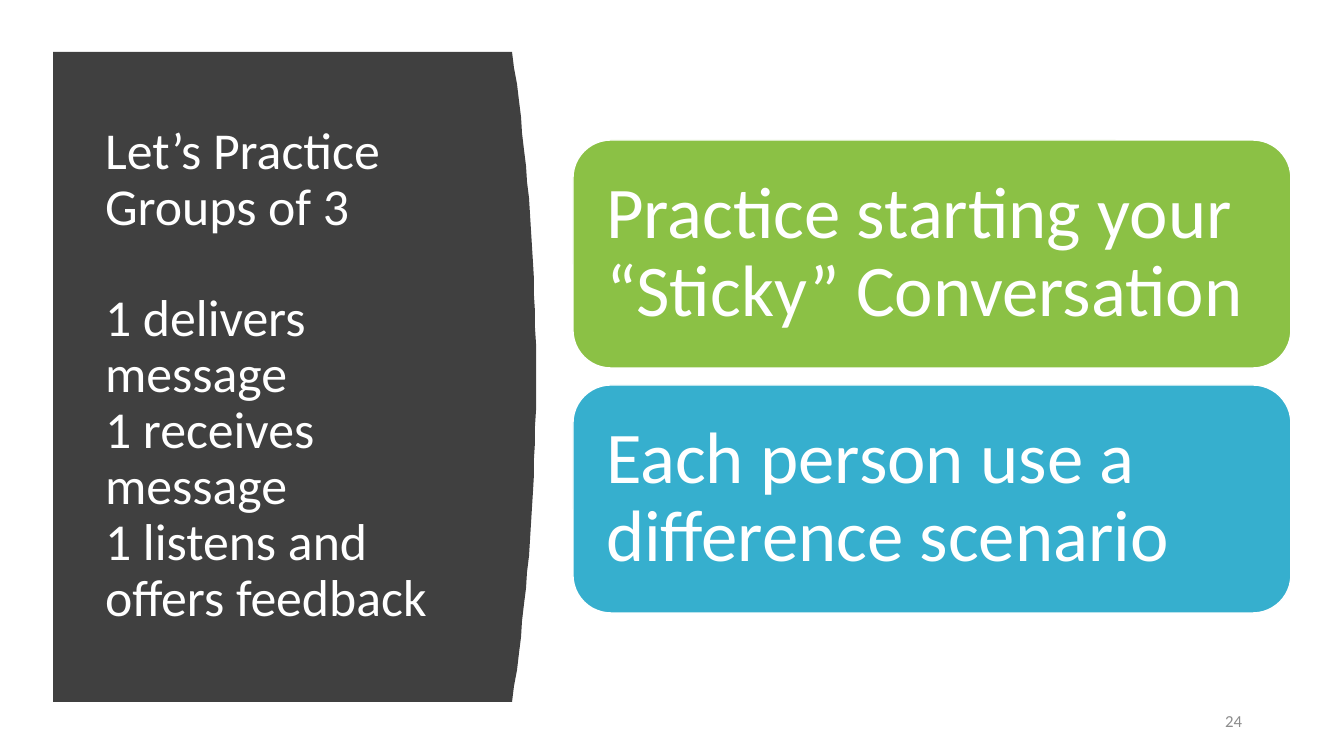
from pptx import Presentation
from pptx import util as u
from pptx.dml.color import RGBColor
from pptx.enum import shapes, text

PX = 914400 / 100.8
FONT = "Calibri"
COLORS = {
    "panel": "404040",
    "green": "8BC145",
    "blue": "36AFCE",
    "white": "FFFFFF",
    "number": "8C8C8C",
}


def px(length):
    return u.Emu(round(length * PX))


def color(name):
    return RGBColor.from_string(COLORS[name])


def place(shape, left, top, width, height):
    shape.left, shape.top = px(left), px(top)
    shape.width, shape.height = px(width), px(height)


def write(shape, paragraphs, size, tint, align=text.PP_ALIGN.LEFT, spacing=None, inset=None):
    frame = shape.text_frame
    frame.word_wrap = True
    frame.auto_size = text.MSO_AUTO_SIZE.NONE
    frame.vertical_anchor = text.MSO_ANCHOR.MIDDLE
    if inset is not None:
        frame.margin_left = frame.margin_right = px(inset)
        frame.margin_top = frame.margin_bottom = px(inset)
    frame.text = "\n".join(paragraphs)
    for para in frame.paragraphs:
        para.alignment = align
        para.line_spacing = spacing
        for span in para.runs:
            span.font.name = FONT
            span.font.size = u.Pt(size)
            span.font.color.rgb = color(tint)


def add_panel(page, left, top, side, bulge, bottom, steps=40):
    middle = (top + bottom) / 2
    half = (bottom - top) / 2
    edge = []
    for step in range(steps + 1):
        y = top + (bottom - top) * step / steps
        edge.append((side + bulge * (1 - ((y - middle) / half) ** 2), y))
    builder = page.shapes.build_freeform(left, top, scale=PX)
    builder.add_line_segments(edge + [(left, bottom)], close=True)
    panel = builder.convert_to_shape()
    panel.shadow.inherit = False
    panel.fill.solid()
    panel.fill.fore_color.rgb = color("panel")
    panel.line.fill.background()


def add_title(page):
    title = page.shapes.title
    place(title, 95, 112, 377, 528)
    page.shapes._spTree.append(title._element)
    groups = "Let’s Practice\vGroups of 3"
    roles = "1 delivers message\v1 receives message\v1 listens and offers feedback"
    write(title, [groups, roles], 37, "white", spacing=0.9)
    title.text_frame.paragraphs[1].space_before = u.Pt(40)


def add_card(page, top, fill, label):
    card = page.shapes.add_shape(
        shapes.MSO_SHAPE.ROUNDED_RECTANGLE, px(573), px(top), px(718), px(228))
    card.shadow.inherit = False
    card.fill.solid()
    card.fill.fore_color.rgb = color(fill)
    card.line.color.rgb = color("white")
    card.line.width = u.Pt(1)
    write(card, [label], 52, "white", spacing=0.9, inset=22)


def add_page_number(page, number):
    box = page.shapes.add_textbox(px(1182), px(701), px(70), px(40))
    write(box, [number], 12, "number", align=text.PP_ALIGN.RIGHT)
    box.text_frame.paragraphs[0].space_after = u.Pt(6)


def main():
    deck = Presentation()
    deck.slide_width, deck.slide_height = px(1344), px(756)
    page = deck.slides.add_slide(deck.slide_layouts[5])
    add_panel(page, left=53, top=52, side=512, bulge=24, bottom=702)
    add_title(page)
    add_page_number(page, "24")
    cards = [
        ("green", "Practice starting your “Sticky” Conversation"),
        ("blue", "Each person use a difference scenario"),
    ]
    for row, (fill, label) in enumerate(cards):
        add_card(page, 140 + 245 * row, fill, label)
    deck.save("out.pptx")


if __name__ == "__main__":
    main()
